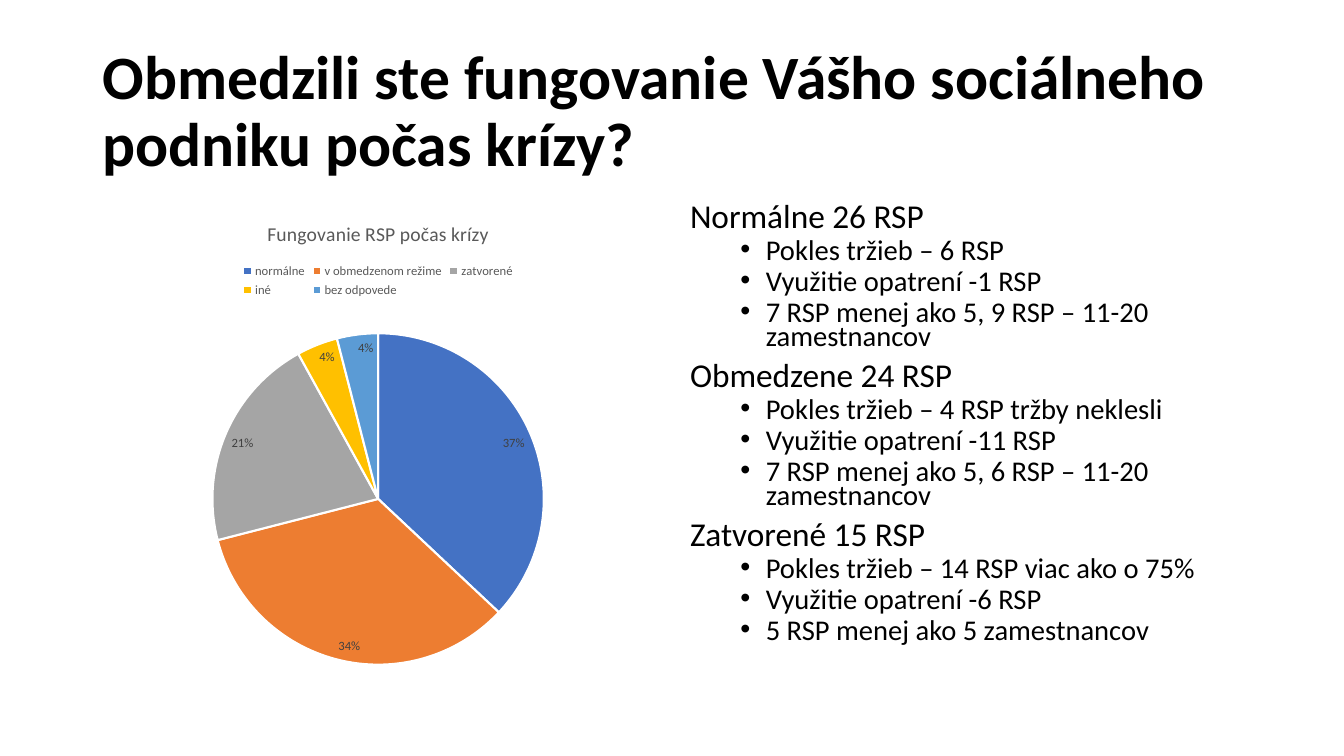
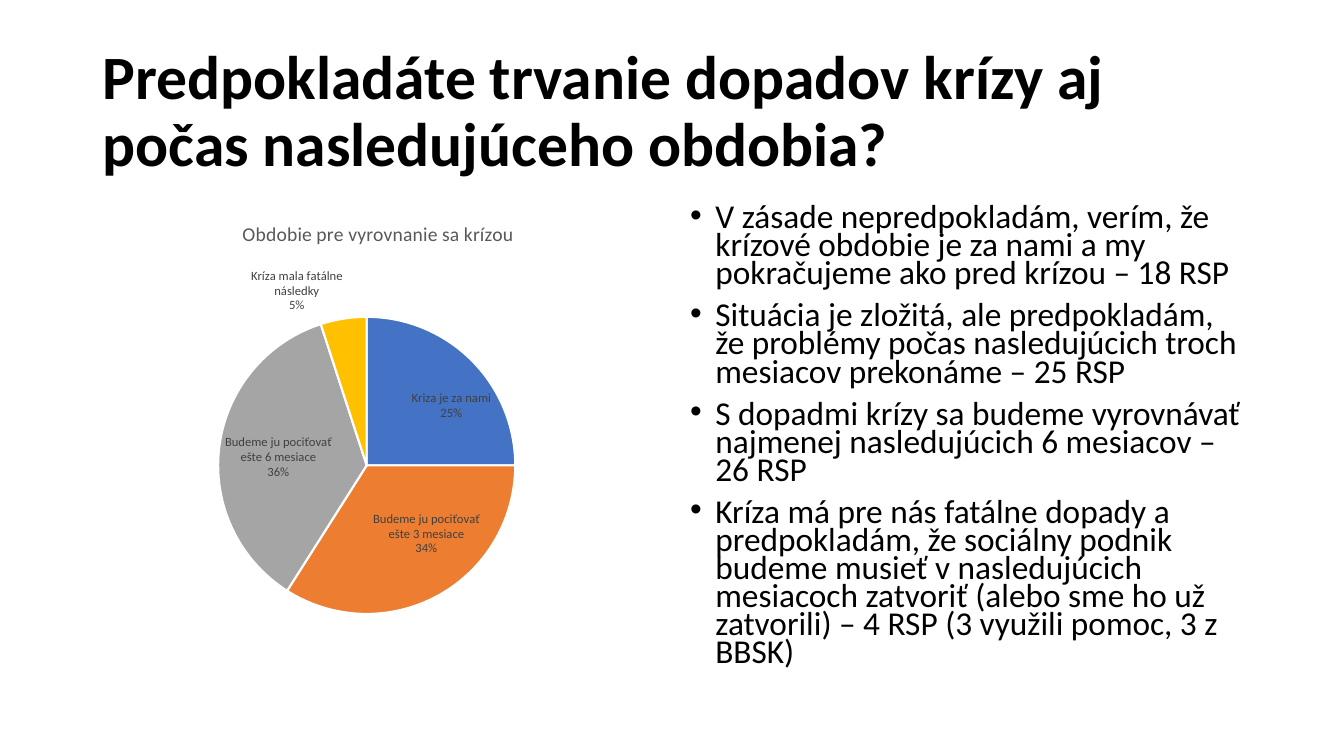
from dataclasses import dataclass

from pptx import Presentation
from pptx.chart.data import CategoryChartData
from pptx.dml.color import RGBColor
from pptx.enum.chart import XL_CHART_TYPE, XL_LABEL_POSITION, XL_LEGEND_POSITION
from pptx.enum.text import MSO_ANCHOR, MSO_AUTO_SIZE, PP_ALIGN
from pptx.oxml import parse_xml
from pptx.oxml.ns import nsdecls, qn
from pptx.util import Cm, Pt

FONT = "Calibri"
COLORS = {"text": "000000", "heading": "595959", "label": "404040", "edge": "FFFFFF"}
SLICE_COLORS = ["4472C4", "ED7D31", "A5A5A5", "FFC000", "5B9BD5"]

# Shared page grid
LEFT, TITLE_TOP, TITLE_WIDTH, TITLE_HEIGHT = Cm(2.33), Cm(1.01), Cm(29.21), Cm(3.68)
COLUMN_TOP, COLUMN_WIDTH, COLUMN_HEIGHT = Cm(5.08), Cm(14.4), Cm(12.09)
ANSWERS_LEFT = LEFT + TITLE_WIDTH - COLUMN_WIDTH
BULLET_HANG = Cm(0.64)


@dataclass(frozen=True)
class ParagraphStyle:
    size: float
    space_before: float
    margin: int
    bullet: bool


HEADING = ParagraphStyle(23.8, 10, Cm(0), False)
ANSWER = ParagraphStyle(23.8, 10, Cm(0.64), True)
DETAIL = ParagraphStyle(20.4, 5, Cm(1.91), True)


@dataclass(frozen=True)
class PieSpec:
    title: str
    shares: dict[str, int]
    area: tuple[float, float, float, float]  # x, y, width, height as fractions
    label_position: XL_LABEL_POSITION
    names_in_labels: bool


@dataclass(frozen=True)
class SurveyPage:
    question: str
    pie: PieSpec
    answers: list[tuple[ParagraphStyle, str]]


PAGES = [
    SurveyPage(
        "Obmedzili ste fungovanie Vášho sociálneho podniku počas krízy?",
        PieSpec(
            "Fungovanie RSP počas krízy",
            {"normálne": 37, "v obmedzenom režime": 34, "zatvorené": 21,
             "iné": 4, "bez odpovede": 4},
            (0.21, 0.27, 0.58, 0.7),
            XL_LABEL_POSITION.INSIDE_END,
            False,
        ),
        [
            (HEADING, "Normálne 26 RSP"),
            (DETAIL, "Pokles tržieb – 6 RSP"),
            (DETAIL, "Využitie opatrení -1 RSP"),
            (DETAIL, "7 RSP menej ako 5, 9 RSP – 11-20 zamestnancov"),
            (HEADING, "Obmedzene 24 RSP"),
            (DETAIL, "Pokles tržieb – 4 RSP tržby neklesli"),
            (DETAIL, "Využitie opatrení -11 RSP"),
            (DETAIL, "7 RSP menej ako 5, 6 RSP – 11-20 zamestnancov"),
            (HEADING, "Zatvorené 15 RSP"),
            (DETAIL, "Pokles tržieb – 14 RSP viac ako o 75%"),
            (DETAIL, "Využitie opatrení -6 RSP"),
            (DETAIL, "5 RSP menej ako 5 zamestnancov"),
        ],
    ),
    SurveyPage(
        "Predpokladáte trvanie dopadov krízy aj počas nasledujúceho obdobia?",
        PieSpec(
            "Obdobie pre vyrovnanie sa krízou",
            {"Kriza je za nami": 25, "Budeme ju pociťovať ešte 3 mesiace": 34,
             "Budeme ju pociťovať ešte 6 mesiace": 36, "Kríza mala fatálne následky": 5},
            (0.22, 0.24, 0.52, 0.62),
            XL_LABEL_POSITION.BEST_FIT,
            True,
        ),
        [
            (ANSWER, "V zásade nepredpokladám, verím, že krízové obdobie je za nami "
                     "a my pokračujeme ako pred krízou – 18 RSP"),
            (ANSWER, "Situácia je zložitá, ale predpokladám, že problémy počas "
                     "nasledujúcich troch mesiacov prekonáme – 25 RSP"),
            (ANSWER, "S dopadmi krízy sa budeme vyrovnávať najmenej nasledujúcich "
                     "6 mesiacov – 26 RSP"),
            (ANSWER, "Kríza má pre nás fatálne dopady a predpokladám, že sociálny podnik "
                     "budeme musieť v nasledujúcich mesiacoch zatvoriť (alebo sme ho už "
                     "zatvorili) – 4 RSP (3 využili pomoc, 3 z BBSK)"),
        ],
    ),
]


def style_font(font, size: float, color: str, bold: bool = False) -> None:
    font.name, font.size, font.bold = FONT, Pt(size), bold
    font.color.rgb = RGBColor.from_string(COLORS[color])


def add_question(slide, question: str) -> None:
    title = slide.shapes.title
    title.left, title.top, title.width, title.height = LEFT, TITLE_TOP, TITLE_WIDTH, TITLE_HEIGHT
    frame = title.text_frame
    frame.auto_size = MSO_AUTO_SIZE.NONE
    frame.vertical_anchor = MSO_ANCHOR.MIDDLE
    paragraph = frame.paragraphs[0]
    paragraph.alignment, paragraph.line_spacing = PP_ALIGN.LEFT, 0.9
    run = paragraph.add_run()
    run.text = question
    style_font(run.font, 44, "text", bold=True)


def add_answers(slide, answers: list[tuple[ParagraphStyle, str]]) -> None:
    frame = slide.shapes.add_textbox(
        ANSWERS_LEFT, COLUMN_TOP, COLUMN_WIDTH, COLUMN_HEIGHT).text_frame
    frame.word_wrap = True
    for index, (style, text) in enumerate(answers):
        paragraph = frame.add_paragraph() if index else frame.paragraphs[0]
        paragraph.line_spacing, paragraph.space_before = 0.7, Pt(style.space_before)
        if style.bullet:
            properties = paragraph._p.get_or_add_pPr()
            properties.set("marL", str(style.margin))
            properties.set("indent", str(-BULLET_HANG))
            properties.append(parse_xml(f'<a:buFont {nsdecls("a")} typeface="Arial"/>'))
            properties.append(parse_xml(f'<a:buChar {nsdecls("a")} char="•"/>'))
        run = paragraph.add_run()
        run.text = text
        style_font(run.font, style.size, "text")


def place_plot(chart, area: tuple[float, float, float, float]) -> None:
    plot_area = chart.element.find(".//" + qn("c:plotArea"))
    for layout in plot_area.findall(qn("c:layout")):
        plot_area.remove(layout)
    x, y, width, height = area
    plot_area.insert(0, parse_xml(
        f'<c:layout {nsdecls("c")}><c:manualLayout><c:layoutTarget val="inner"/>'
        f'<c:xMode val="edge"/><c:yMode val="edge"/><c:x val="{x}"/><c:y val="{y}"/>'
        f'<c:w val="{width}"/><c:h val="{height}"/></c:manualLayout></c:layout>'))


def add_pie(slide, pie: PieSpec) -> None:
    data = CategoryChartData()
    data.categories = list(pie.shares)
    data.add_series(pie.title, list(pie.shares.values()))
    chart = slide.shapes.add_chart(
        XL_CHART_TYPE.PIE, LEFT, COLUMN_TOP, COLUMN_WIDTH, COLUMN_HEIGHT, data).chart
    style_font(chart.font, 10, "text")
    place_plot(chart, pie.area)

    # Heading and legend
    chart.has_title = True
    heading = chart.chart_title.text_frame.paragraphs[0].add_run()
    heading.text = pie.title
    style_font(heading.font, 14, "heading")
    chart.has_legend = not pie.names_in_labels
    if chart.has_legend:
        chart.legend.position = XL_LEGEND_POSITION.TOP
        chart.legend.include_in_layout = False
        style_font(chart.legend.font, 9, "heading")

    # Slices
    chart.plots[0].vary_by_categories = True
    series = chart.plots[0].series[0]
    for index, color in enumerate(SLICE_COLORS[:len(pie.shares)]):
        slice_format = series.points[index].format
        slice_format.fill.solid()
        slice_format.fill.fore_color.rgb = RGBColor.from_string(color)
        slice_format.line.color.rgb = RGBColor.from_string(COLORS["edge"])
        slice_format.line.width = Pt(1.5)

    # Labels
    labels = series.data_labels
    labels.show_value, labels.show_percentage = False, True
    labels.show_category_name = pie.names_in_labels
    labels.number_format, labels.number_format_is_linked = "0%", False
    labels.position = pie.label_position
    style_font(labels.font, 9, "label")
    if pie.names_in_labels:
        last_flag = series.data_labels._element.find(qn("c:showPercent"))
        bubble_flag = last_flag.getnext()
        if bubble_flag is not None and bubble_flag.tag == qn("c:showBubbleSize"):
            last_flag = bubble_flag
        last_flag.addnext(parse_xml(f'<c:separator {nsdecls("c")}>\n</c:separator>'))


def main() -> None:
    presentation = Presentation()
    presentation.slide_width, presentation.slide_height = Cm(33.87), Cm(19.05)
    title_only = presentation.slide_layouts[5]
    for page in PAGES:
        slide = presentation.slides.add_slide(title_only)
        add_question(slide, page.question)
        add_pie(slide, page.pie)
        add_answers(slide, page.answers)
    presentation.save("out.pptx")


if __name__ == "__main__":
    main()
